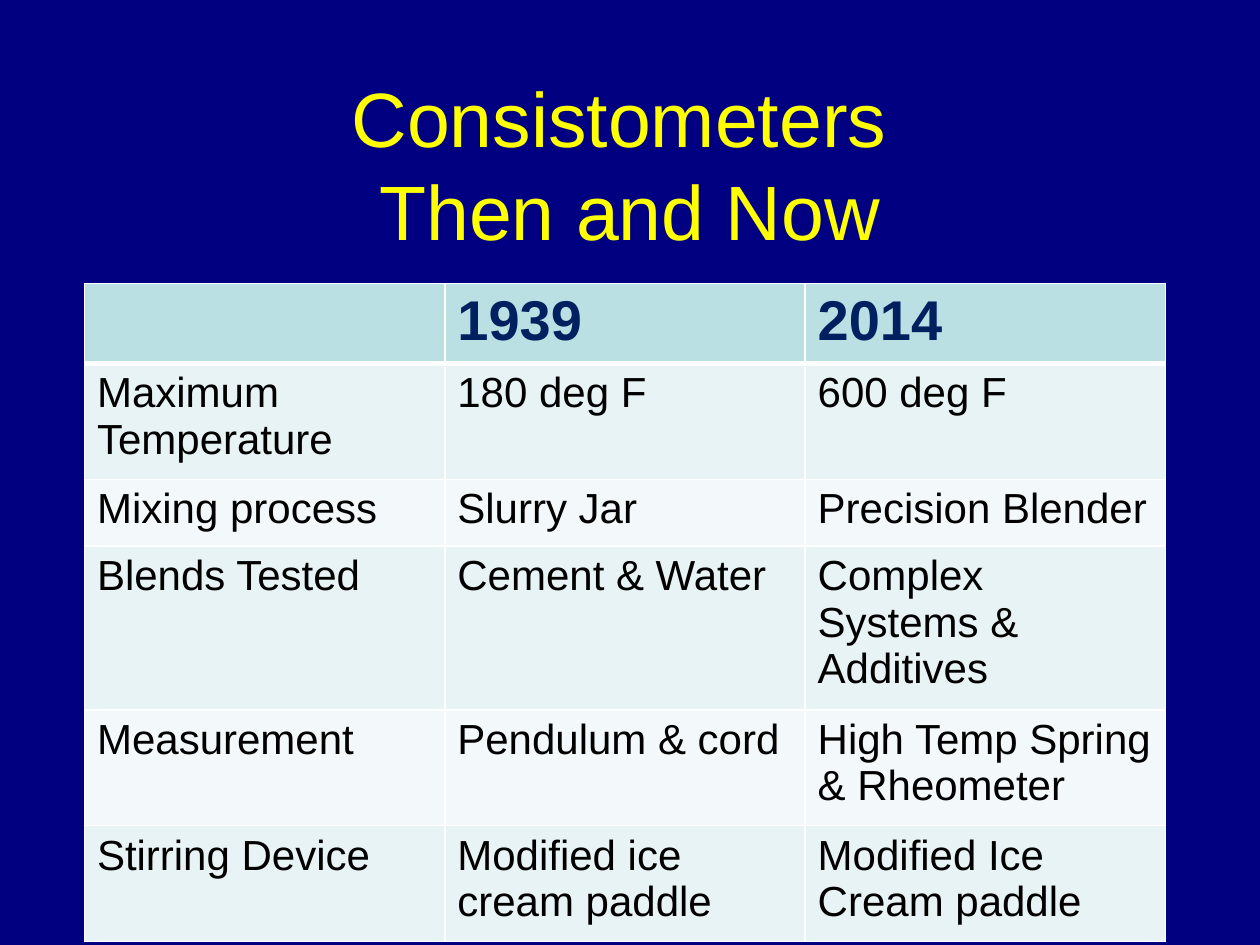
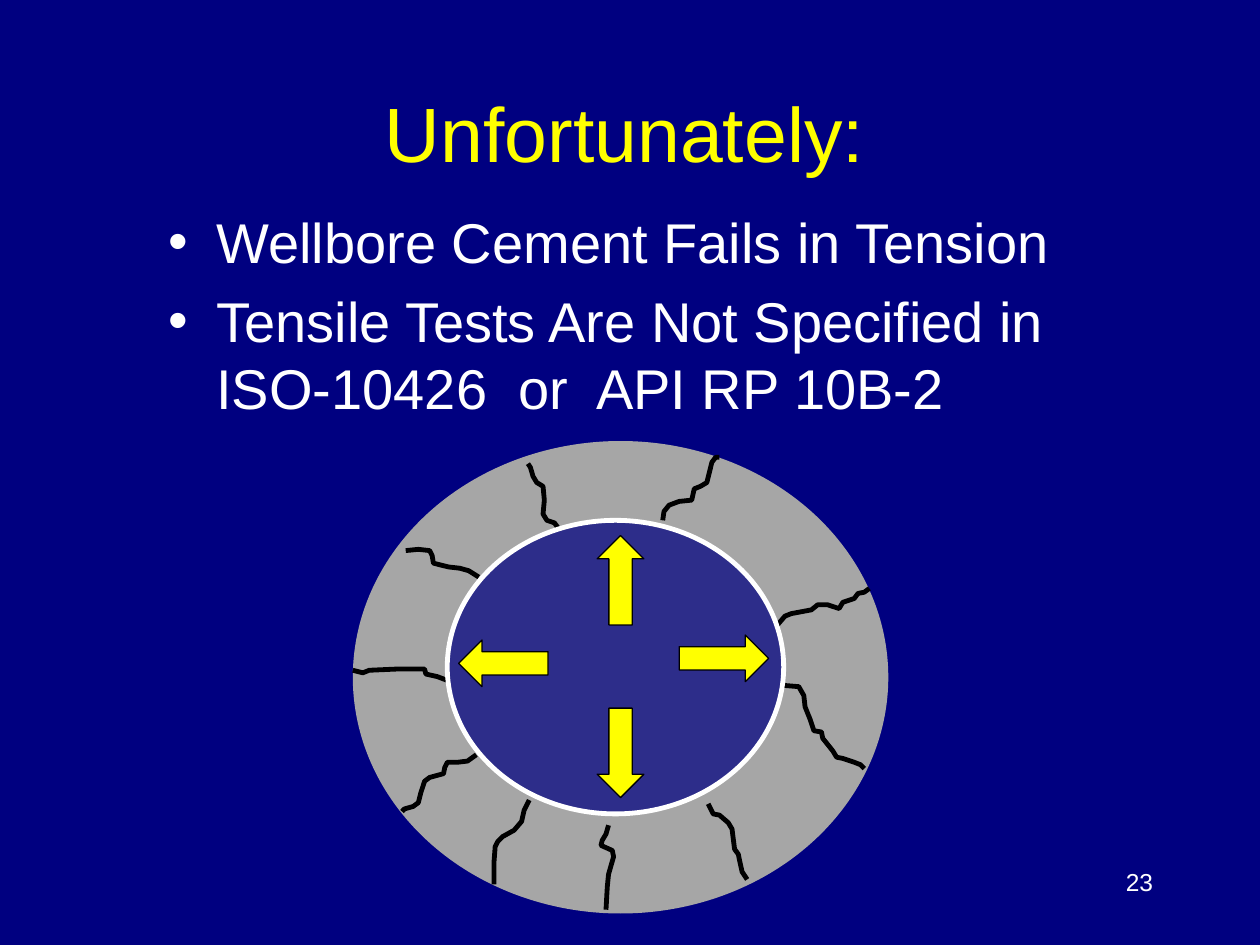
from lxml.etree import SubElement
from pptx import Presentation
from pptx.dml.color import RGBColor as Rgb
from pptx.enum.shapes import MSO_SHAPE as Shape
from pptx.enum.text import MSO_ANCHOR as Anchor, PP_ALIGN as Align
from pptx.oxml.ns import qn
from pptx.util import Pt

PX = 9144
PAGE_SIZE = (1000, 750)
FONT = "Arial"
COLOURS = {
    "navy": "000080", "yellow": "FFFF00", "white": "FFFFFF", "black": "000000",
    "header": "BBE0E3", "header_text": "002060", "odd_row": "E7F3F4",
    "even_row": "F3F9FA", "cement": "A6A6A6", "casing": "2D2D8A",
}
FORMATS = {
    "title": {"size": 44, "colour": "yellow"},
    "body": {"size": 32, "colour": "white"},
    "number": {"size": 14, "colour": "white"},
    "header": {"size": 32, "colour": "header_text", "bold": True},
    "cell": {"size": 24, "colour": "black", "bold": False},
}

COMPARISON = {
    "title": "Consistometers \vThen and Now",
    "title_at": (75, 67, 850, 125),
    "table_at": (67, 225, 858, 485),
    "row_heights": (53, 92, 53, 92, 92, 92),
    "rows": [
        ("", "1939", "2014"),
        ("Maximum Temperature", "180 deg F", "600 deg F"),
        ("Mixing process", "Slurry Jar", "Precision Blender"),
        ("Blends Tested", "Cement & Water", "Complex Systems & Additives"),
        ("Measurement", "Pendulum & cord", "High Temp Spring & Rheometer"),
        ("Stirring Device", "Modified ice cream paddle", "Modified Ice Cream paddle"),
    ],
}
TENSION = {
    "title": "Unfortunately:",
    "title_at": (71, 42, 850, 125),
    "number": "23",
    "number_at": (717, 683, 208, 50),
    "bullets": [
        "Wellbore Cement Fails in Tension",
        "Tensile Tests Are Not Specified in\vISO-10426  or  API RP 10B-2",
    ],
    "bullets_at": (124, 160, 850, 450),
    "cement_at": (280, 350, 425, 375),
    "casing_at": (355, 413, 267, 233),
}
CRACKS = [
    [(526, 413), (527, 406), (531, 401), (539, 398), (549, 397), (551, 388), (556, 386),
     (561, 383), (564, 371), (565, 367), (568, 363), (571, 363)],
    [(617, 496), (623, 489), (628, 487), (644, 484), (649, 480), (657, 480), (666, 483),
     (669, 478), (678, 475), (681, 471), (686, 470), (690, 467)],
    [(444, 426), (443, 419), (440, 415), (434, 413), (431, 408), (432, 397), (431, 386),
     (426, 383), (423, 378), (421, 371), (419, 368)],
    [(380, 458), (372, 453), (365, 451), (356, 450), (352, 449), (344, 447), (343, 441),
     (341, 437), (332, 436), (322, 437)],
    [(355, 540), (347, 537), (338, 535), (337, 531), (315, 531), (293, 532), (288, 534),
     (280, 532)],
    [(378, 599), (371, 604), (363, 605), (355, 605), (353, 609), (352, 614), (341, 617),
     (337, 620), (334, 629), (332, 637), (328, 640), (321, 642), (319, 644)],
    [(420, 635), (416, 643), (414, 652), (408, 659), (399, 664), (395, 668), (393, 672),
     (392, 685), (392, 702)],
    [(622, 544), (634, 545), (638, 552), (639, 561), (643, 571), (646, 580), (652, 581),
     (653, 586), (661, 596), (664, 601), (669, 602), (678, 605), (683, 607), (686, 610)],
    [(562, 638), (566, 646), (571, 647), (578, 653), (581, 658), (583, 674), (586, 678),
     (587, 683), (589, 692), (593, 698)],
    [(483, 655), (481, 662), (478, 667), (477, 671), (486, 675), (487, 680), (483, 694),
     (482, 704), (481, 722)],
]
ARROW_LENGTH, ARROW_BREADTH = 71, 37
ARROWS = [
    (Shape.DOWN_ARROW, 474, 562),
    (Shape.UP_ARROW, 474, 425),
    (Shape.RIGHT_ARROW, 539, 504),
    (Shape.LEFT_ARROW, 364, 508),
]


def emu(lengths):
    return [length * PX for length in lengths]


def colour(name):
    return Rgb.from_string(COLOURS[name])


def write(para, text, style):
    para.text = text
    formats = dict(FORMATS[style], name=FONT)
    hue = colour(formats.pop("colour"))
    formats["size"] = Pt(formats["size"])
    for span in para.runs:
        for name, value in formats.items():
            setattr(span.font, name, value)
        span.font.color.rgb = hue


def add_text(page, at, texts, style, align=Align.LEFT, anchor=Anchor.TOP):
    frame = page.shapes.add_textbox(*emu(at)).text_frame
    frame.word_wrap = True
    frame.vertical_anchor = anchor
    for index, text in enumerate(texts):
        para = frame.add_paragraph() if index else frame.paragraphs[0]
        para.alignment = align
        write(para, text, style)
    return frame


def add_page(deck):
    page = deck.slides.add_slide(deck.slide_layouts[6])
    page.background.fill.solid()
    page.background.fill.fore_color.rgb = colour("navy")
    return page


def add_title(page, content):
    add_text(page, content["title_at"], [content["title"]], "title", Align.CENTER, Anchor.MIDDLE)


def paint(shape, fill=None, line=None, width=0):
    shape.shadow.inherit = False
    if fill:
        shape.fill.solid()
        shape.fill.fore_color.rgb = colour(fill)
    else:
        shape.fill.background()
    if line:
        shape.line.color.rgb = colour(line)
        shape.line.width = Pt(width)
    else:
        shape.line.fill.background()


def add_preset(page, preset, at, **look):
    paint(page.shapes.add_shape(preset, *emu(at)), **look)


def add_borders(cell, bottom):
    properties = cell._tc.get_or_add_tcPr()
    for side, width in zip("LRTB", (1, 1, 1, bottom)):
        edge = SubElement(properties, qn(f"a:ln{side}"), w=str(Pt(width)))
        SubElement(SubElement(edge, qn("a:solidFill")), qn("a:srgbClr"), val=COLOURS["white"])


def add_bullets(frame):
    for para in frame.paragraphs:
        para.space_before = Pt(6.4)
        properties = para._p.get_or_add_pPr()
        properties.set("marL", str(38 * PX))
        properties.set("indent", str(-38 * PX))
        SubElement(properties, qn("a:buFont"), typeface=FONT)
        SubElement(properties, qn("a:buChar"), char="•")


def add_comparison(deck):
    page = add_page(deck)
    add_title(page, COMPARISON)
    rows = COMPARISON["rows"]
    table = page.shapes.add_table(len(rows), len(rows[0]), *emu(COMPARISON["table_at"])).table
    table.horz_banding = table.first_row = False
    for row, height in zip(table.rows, COMPARISON["row_heights"]):
        row.height = height * PX
    for column in table.columns:
        column.width = COMPARISON["table_at"][2] * PX // len(rows[0])
    for index, texts in enumerate(rows):
        fill = ("odd_row" if index % 2 else "even_row") if index else "header"
        for cell, text in zip(table.rows[index].cells, texts):
            add_borders(cell, 1 if index else 3)
            cell.fill.solid()
            cell.fill.fore_color.rgb = colour(fill)
            if text:
                write(cell.text_frame.paragraphs[0], text, "cell" if index else "header")


def add_tension(deck):
    page = add_page(deck)
    add_preset(page, Shape.OVAL, TENSION["cement_at"], fill="cement")
    add_title(page, TENSION)
    add_text(page, TENSION["number_at"], [TENSION["number"]], "number", Align.RIGHT)
    add_bullets(add_text(page, TENSION["bullets_at"], TENSION["bullets"], "body"))
    for start, *points in CRACKS:
        outline = page.shapes.build_freeform(*start, scale=PX)
        outline.add_line_segments(points, close=False)
        paint(outline.convert_to_shape(), line="black", width=2.75)
    add_preset(page, Shape.OVAL, TENSION["casing_at"], fill="casing", line="white", width=2.75)
    for preset, left, top in ARROWS:
        size = (ARROW_BREADTH, ARROW_LENGTH)
        if preset in (Shape.LEFT_ARROW, Shape.RIGHT_ARROW):
            size = size[::-1]
        add_preset(page, preset, (left, top, *size), fill="yellow", line="black", width=0.75)


def main():
    deck = Presentation()
    deck.slide_width, deck.slide_height = emu(PAGE_SIZE)
    add_comparison(deck)
    add_tension(deck)
    deck.save("out.pptx")


if __name__ == "__main__":
    main()
